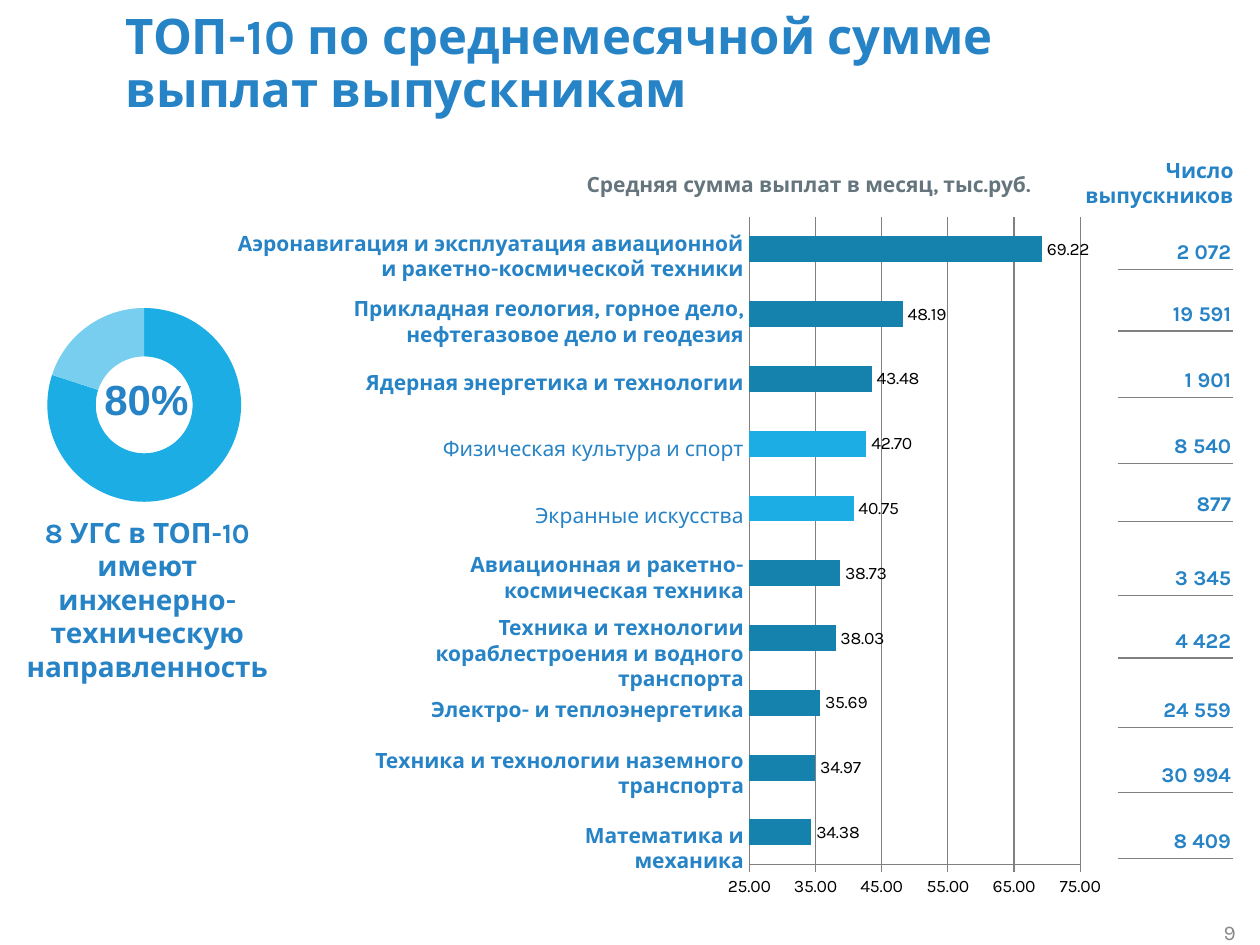
"""Build the slide on the top ten fields by average monthly graduate payments."""
from lxml import etree
from pptx import Presentation
from pptx.chart import data
from pptx.dml.color import RGBColor
from pptx.enum import chart as charts, shapes, text
from pptx.oxml import parse_xml
from pptx.oxml.ns import nsdecls, qn
from pptx.util import Pt

BLUE = RGBColor(0x26, 0x83, 0xC6)
DEEP = RGBColor(0x14, 0x82, 0xAC)
BRIGHT = RGBColor(0x1C, 0xAD, 0xE4)
PALE = RGBColor(0x77, 0xCE, 0xEF)
SLATE = RGBColor(0x65, 0x75, 0x7D)
GRAY = RGBColor(0x80, 0x80, 0x80)
LIGHT_GRAY = RGBColor(0x89, 0x89, 0x89)
BLACK = RGBColor(0, 0, 0)
LEFT, CENTER, RIGHT = text.PP_ALIGN.LEFT, text.PP_ALIGN.CENTER, text.PP_ALIGN.RIGHT
TIGHT = (2.9, 3.6)
LABEL_RIGHT = 428

prs = Presentation()
prs.slide_width, prs.slide_height = Pt(720), Pt(540)
slide = prs.slides.add_slide(prs.slide_layouts[6])


def add_text(words, box, align=RIGHT, size=12, color=BLUE, bold=True, font="Karla",
             insets=TIGHT, anchor=text.MSO_ANCHOR.TOP, grow=True, spacing=None):
    frame = slide.shapes.add_textbox(*map(Pt, box)).text_frame
    frame.word_wrap = True
    frame.auto_size = text.MSO_AUTO_SIZE.SHAPE_TO_FIT_TEXT if grow else text.MSO_AUTO_SIZE.NONE
    frame.margin_left = frame.margin_right = Pt(insets[0])
    frame.margin_top = frame.margin_bottom = Pt(insets[1])
    frame.vertical_anchor = anchor
    paragraph = frame.paragraphs[0]
    paragraph.alignment = align
    paragraph.line_spacing = spacing
    for number, line in enumerate(words.split("\n")):
        if number:
            paragraph.add_line_break()
        run = paragraph.add_run()
        run.text = line
        run.font.name, run.font.size, run.font.bold = font, Pt(size), bold
        run.font.color.rgb = color


def add_plot(kind, box, values, colors, inner):
    source = data.CategoryChartData()
    source.categories = [str(n + 1) for n in range(len(values))]
    source.add_series("Series 1", values)
    chart = slide.shapes.add_chart(kind, *map(Pt, box), source).chart
    chart.has_legend = chart.has_title = False
    chart.font.name, chart.font.size = "Karla", Pt(10)
    chart.font.color.rgb = BLACK
    chart.plots[0].vary_by_categories = False
    for n, color in enumerate(colors):
        fill = chart.plots[0].series[0].points[n].format.fill
        fill.solid()
        fill.fore_color.rgb = color
    area = chart._chartSpace.find(".//" + qn("c:plotArea"))
    for old in area.findall(qn("c:layout")):
        area.remove(old)
    sizes = "".join(f'<c:{tag} val="{val}"/>' for tag, val in zip("xywh", inner))
    area.insert(0, parse_xml(
        f'<c:layout {nsdecls("c")}><c:manualLayout><c:layoutTarget val="inner"/>'
        f'<c:xMode val="edge"/><c:yMode val="edge"/>{sizes}</c:manualLayout></c:layout>'))
    return chart


add_plot(charts.XL_CHART_TYPE.DOUGHNUT, (16.6, 165.6, 130.3, 130.3), (80, 20),
         (BRIGHT, PALE), (0.08, 0.08, 0.85, 0.85))
add_text("ТОП-10 по среднемесячной сумме выплат выпускникам", (64.8, 5.8, 621.4, 62.6),
         LEFT, 28, insets=(7.2, 3.6), anchor=text.MSO_ANCHOR.MIDDLE, grow=False, spacing=0.9)
add_text("9", (686.2, 525.6, 33.1, 13.7), CENTER, color=LIGHT_GRAY, bold=False,
         insets=(0, 0), anchor=text.MSO_ANCHOR.MIDDLE, grow=False)
add_text("80%", (52.6, 210.2, 95.8, 36), LEFT, 24, font="Arial", insets=(7.2, 3.6))
add_text("8 УГС в ТОП-10 имеют инженерно-техническую направленность",
         (0, 290.9, 168.5, 85), CENTER, 16)
add_text("Средняя сумма выплат в месяц, тыс.руб.", (325.4, 94.3, 273.6, 21.6), CENTER,
         color=SLATE, insets=(7.2, 3.6))

payments = (34.38, 34.97, 35.69, 38.03, 38.73, 40.75, 42.70, 43.48, 48.19, 69.22)
bars = add_plot(charts.XL_CHART_TYPE.BAR_CLUSTERED, (412.6, 115.9, 222.5, 406.8), payments,
                [BRIGHT if n in (5, 6) else DEEP for n in range(10)], (0.07, 0.02, 0.85, 0.91))
bars.plots[0].gap_width = 150
bars.category_axis.visible = False
scale = bars.value_axis
scale.minimum_scale, scale.maximum_scale, scale.major_unit = 25, 75, 10
scale.major_tick_mark = charts.XL_TICK_MARK.OUTSIDE
scale.has_major_gridlines = True
for line in (scale.format.line, scale.major_gridlines.format.line):
    line.color.rgb = GRAY
    line.width = Pt(0.75)
amounts = bars.plots[0].series[0].data_labels
amounts.show_value = True
amounts.position = charts.XL_LABEL_POSITION.OUTSIDE_END
for numbers in (scale.tick_labels, amounts):
    numbers.number_format, numbers.number_format_is_linked = "#,##0.00", False

fields = (
    ("Аэронавигация и эксплуатация авиационной и ракетно-космической техники",
     129.6, 128.2, 36, "2 072", 154.1),
    ("Прикладная геология, горное дело, нефтегазовое дело и геодезия",
     175.7, 165.6, 36, "19 591", 189.2),
    ("Ядерная энергетика и технологии", 176.4, 207.4, 21.6, "1 901", 227),
    ("Физическая культура и спорт", 208.1, 245.5, 21.6, "8 540", 264.8),
    ("Экранные искусства", 267.1, 283.7, 21.6, "877", 297.9),
    ("Авиационная и ракетно-космическая техника", 195.8, 311.8, 36, "3 345", 340.4),
    ("Техника и технологии кораблестроения и водного транспорта",
     171.4, 347.8, 36, "4 422", 376),
    ("Электро- и теплоэнергетика", 201.6, 394.6, 21.6, "24 559", 415.6),
    ("Техника и технологии наземного транспорта", 194.4, 423.4, 36, "30 994", 453),
    ("Математика и механика", 267.1, 466.6, 21.6, "8 409", 490.5),
)
for rank, (field, left, top, height, graduates, rule_y) in enumerate(fields):
    add_text(field, (left, top, LABEL_RIGHT - left, height), bold=rank not in (3, 4))
    rule = slide.shapes.add_connector(shapes.MSO_CONNECTOR.STRAIGHT,
                                      Pt(638.8), Pt(rule_y), Pt(704.7), Pt(rule_y))
    rule.line.color.rgb = GRAY
    rule.line.width = Pt(0.75)
    etree.SubElement(rule._element.spPr, qn("a:effectLst"))
    add_text(graduates, (629.4, rule_y - 21.2, 77, 21.6))
add_text("Число\nвыпускников", (572.4, 86.4, 135.4, 36))

prs.save("out.pptx")
